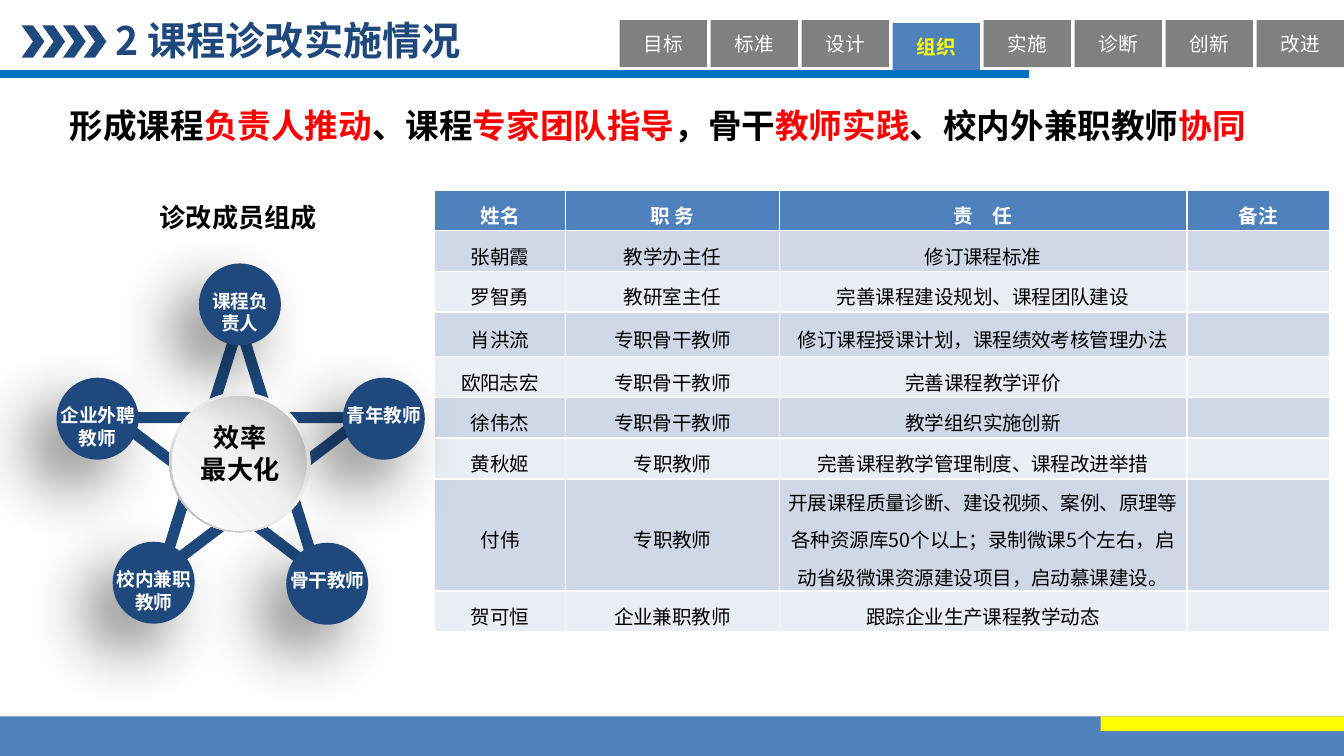
"""Builds the slide on how the course improvement team is organised."""
import dataclasses

import lxml.etree
import pptx
import pptx.dml.color
import pptx.enum.shapes
import pptx.enum.text
import pptx.oxml.ns
import pptx.util

Cm, Pt, qn = pptx.util.Cm, pptx.util.Pt, pptx.oxml.ns.qn
SHAPE = pptx.enum.shapes.MSO_SHAPE
ALIGN = pptx.enum.text.PP_ALIGN
ANCHOR = pptx.enum.text.MSO_ANCHOR


@dataclasses.dataclass(frozen=True)
class Theme:
    cjk: str = "Noto Sans CJK SC"
    latin: str = "Calibri"
    navy: str = "1F497D"
    blue: str = "4F81BD"
    rule: str = "0070C0"
    grey: str = "808080"
    yellow: str = "FFFF00"
    red: str = "FF0000"
    black: str = "000000"
    white: str = "FFFFFF"
    bands: tuple = ("D0D8E8", "E9EDF4")
    title: float = 21
    headline: float = 18
    heading: float = 14
    small: float = 10.5
    label: float = 10


THEME = Theme()

TITLE = "2 课程诊改实施情况"
TABS = ["目标", "标准", "设计", "组织", "实施", "诊断", "创新", "改进"]
ACTIVE_TAB = "组织"
HEADLINE = [
    ("形成课程", THEME.black), ("负责人推动", THEME.red),
    ("、课程", THEME.black), ("专家团队指导", THEME.red),
    ("，骨干", THEME.black), ("教师实践", THEME.red),
    ("、校内外兼职教师", THEME.black), ("协同", THEME.red),
]
DIAGRAM_HEADING = "诊改成员组成"
HUB = ["效率", "最大化"]
MEMBERS = [
    (["企业外聘教师"], 1.07, 7.14),
    (["课程负", "责人"], 3.76, 4.98),
    (["青年教师"], 6.48, 7.14),
    (["骨干教师"], 5.41, 10.26),
    (["校内兼职教师"], 2.13, 10.24),
]
TEAM = [
    ("姓名", "职 务", "责　任", "备注"),
    ("张朝霞", "教学办主任", "修订课程标准", ""),
    ("罗智勇", "教研室主任", "完善课程建设规划、课程团队建设", ""),
    ("肖洪流", "专职骨干教师", "修订课程授课计划，课程绩效考核管理办法", ""),
    ("欧阳志宏", "专职骨干教师", "完善课程教学评价", ""),
    ("徐伟杰", "专职骨干教师", "教学组织实施创新", ""),
    ("黄秋姬", "专职教师", "完善课程教学管理制度、课程改进举措", ""),
    ("付伟", "专职教师", "开展课程质量诊断、建设视频、案例、原理等各种资源库50个以上；"
     "录制微课5个左右，启动省级微课资源建设项目，启动慕课建设。", ""),
    ("贺可恒", "企业兼职教师", "跟踪企业生产课程教学动态", ""),
]
COLUMN_WIDTHS = [2.48, 4.04, 7.7, 2.7]
ROW_HEIGHTS = [0.77, 0.77, 0.77, 0.84, 0.77, 0.77, 0.77, 2.1, 0.77]


def color(value):
    return pptx.dml.color.RGBColor.from_string(value)


def style(para, size, fill, bold=True, align=ALIGN.CENTER, latin=THEME.cjk):
    para.alignment = align
    font = para.font
    font.size, font.bold = Pt(size), bold
    font.color.rgb = color(fill)
    font.name = latin
    properties = para._p.pPr.find(qn("a:defRPr"))
    lxml.etree.SubElement(properties, qn("a:ea"), typeface=THEME.cjk)


def write(frame, lines, size, fill, **options):
    for index, line in enumerate(lines):
        para = frame.add_paragraph() if index else frame.paragraphs[0]
        para.text = line
        style(para, size, fill, **options)


def set_margins(frame, side, top):
    frame.margin_left = frame.margin_right = Cm(side)
    frame.margin_top = frame.margin_bottom = Cm(top)


def add_box(slide, left, top, width, height):
    box = slide.shapes.add_textbox(Cm(left), Cm(top), Cm(width), Cm(height))
    box.text_frame.word_wrap = True
    return box.text_frame


def add_shape(slide, kind, left, top, width, height, fill=None):
    shape = slide.shapes.add_shape(kind, Cm(left), Cm(top), Cm(width), Cm(height))
    shape.shadow.inherit = False
    shape.line.fill.background()
    if fill:
        shape.fill.solid()
        shape.fill.fore_color.rgb = color(fill)
    else:
        shape.fill.background()
    return shape


def set_gradient(shape, stops, clockwise_angle):
    shape.fill.gradient()
    shape.fill.gradient_angle = 360 - clockwise_angle
    stop_list = shape._element.spPr.find(".//" + qn("a:gsLst"))
    stop_list.clear()
    for percent, value in stops:
        stop = lxml.etree.SubElement(stop_list, qn("a:gs"), pos=str(percent * 1000))
        lxml.etree.SubElement(stop, qn("a:srgbClr"), val=value)


def add_soft_shadow(shape):
    effects = shape._element.spPr.find(qn("a:effectLst"))
    shadow = lxml.etree.SubElement(
        effects, qn("a:outerShdw"), blurRad=str(Pt(35)), dist=str(Pt(20)),
        dir=str(135 * 60000), algn="tr", rotWithShape="0")
    tint = lxml.etree.SubElement(shadow, qn("a:srgbClr"), val=THEME.black)
    lxml.etree.SubElement(tint, qn("a:alpha"), val="50000")


def add_header(slide):
    title = slide.shapes.title
    title.left, title.top, title.width, title.height = Cm(2), Cm(0.25), Cm(9.5), Cm(1.02)
    set_margins(title.text_frame, 0.18, 0.1)
    title.text_frame.vertical_anchor = ANCHOR.MIDDLE
    write(title.text_frame, [TITLE], THEME.title, THEME.navy, align=ALIGN.LEFT)
    for index in range(4):
        add_shape(slide, SHAPE.CHEVRON, 0.41 + 0.39 * index, 0.48, 0.43, 0.61, THEME.navy)
    for index, name in enumerate(TABS):
        active = name == ACTIVE_TAB
        tab = add_shape(slide, SHAPE.RECTANGLE, 11.71 + 1.72 * index,
                        0.44 if active else 0.38, 1.65, 0.89,
                        THEME.blue if active else THEME.grey)
        tab.text_frame.vertical_anchor = ANCHOR.MIDDLE
        write(tab.text_frame, [name], THEME.small, THEME.yellow if active else THEME.white,
              bold=active, latin=THEME.latin)
    rule = slide.shapes.add_connector(
        pptx.enum.shapes.MSO_CONNECTOR.STRAIGHT, Cm(0), Cm(1.4), Cm(19.45), Cm(1.4))
    rule.line.color.rgb, rule.line.width = color(THEME.rule), Pt(4)
    lxml.etree.SubElement(rule._element.spPr, qn("a:effectLst"))


def add_headline(slide):
    para = add_box(slide, 1.07, 1.85, 24.18, 1.02).paragraphs[0]
    style(para, THEME.headline, THEME.black, align=ALIGN.LEFT)
    for text, fill in HEADLINE:
        span = para.add_run()
        span.text = text
        span.font.color.rgb = color(fill)


def add_team_table(slide):
    table = slide.shapes.add_table(
        len(TEAM), len(COLUMN_WIDTHS), Cm(8.21), Cm(3.59),
        Cm(sum(COLUMN_WIDTHS)), Cm(sum(ROW_HEIGHTS))).table
    for column, width in zip(table.columns, COLUMN_WIDTHS):
        column.width = Cm(width)
    for index, (row, height, texts) in enumerate(zip(table.rows, ROW_HEIGHTS, TEAM)):
        row.height = Cm(height)
        header = index == 0
        for cell, text in zip(row.cells, texts):
            cell.fill.solid()
            cell.fill.fore_color.rgb = color(THEME.blue if header else THEME.bands[(index - 1) % 2])
            cell.vertical_anchor = ANCHOR.MIDDLE
            set_margins(cell, 0.15, 0)
            cell.text_frame.paragraphs[0].line_spacing = Pt(20)
            write(cell.text_frame, [text], THEME.small,
                  THEME.white if header else THEME.black, bold=header)


def add_team_star(slide):
    heading = add_box(slide, 2.77, 3.68, 3.86, 0.86)
    write(heading, [DIAGRAM_HEADING], THEME.heading, THEME.black, align=ALIGN.LEFT)
    star = add_shape(slide, SHAPE.STAR_5_POINT, 2.16, 6.1, 4.72, 4.7)
    star.line.color.rgb, star.line.width = color(THEME.navy), Pt(6)
    ring = add_shape(slide, SHAPE.DONUT, 3.2, 7.42, 2.67, 2.64)
    ring.adjustments[0] = 0.05
    set_gradient(ring, [(0, "FFFFFF"), (55, "F2F2F2"), (100, "A6A6A6")], 135)
    disc = add_shape(slide, SHAPE.OVAL, 3.25, 7.49, 2.54, 2.54)
    set_gradient(disc, [(0, "FFFFFF"), (51, "F2F2F2"), (100, "BFBFBF")], 315)
    write(add_box(slide, 3.45, 7.85, 2.18, 1.45), HUB, THEME.heading, THEME.black)
    for _, left, top in MEMBERS:
        add_soft_shadow(add_shape(slide, SHAPE.OVAL, left, top, 1.55, 1.55, THEME.navy))
    for lines, left, top in MEMBERS:
        label = add_box(slide, left + 0.04, top + 0.5, 1.47, 0.86)
        set_margins(label, 0, 0)
        write(label, lines, THEME.label, THEME.white)


def main():
    deck = pptx.Presentation()
    deck.slide_width, deck.slide_height = Cm(25.4), Cm(14.29)
    page = deck.slides.add_slide(deck.slide_layouts[5])
    add_header(page)
    add_headline(page)
    add_team_table(page)
    add_team_star(page)
    add_shape(page, SHAPE.RECTANGLE, 0, 13.54, 25.4, 0.75, THEME.blue)
    add_shape(page, SHAPE.RECTANGLE, 20.8, 13.54, 4.6, 0.28, THEME.yellow)
    deck.save("out.pptx")


if __name__ == "__main__":
    main()
